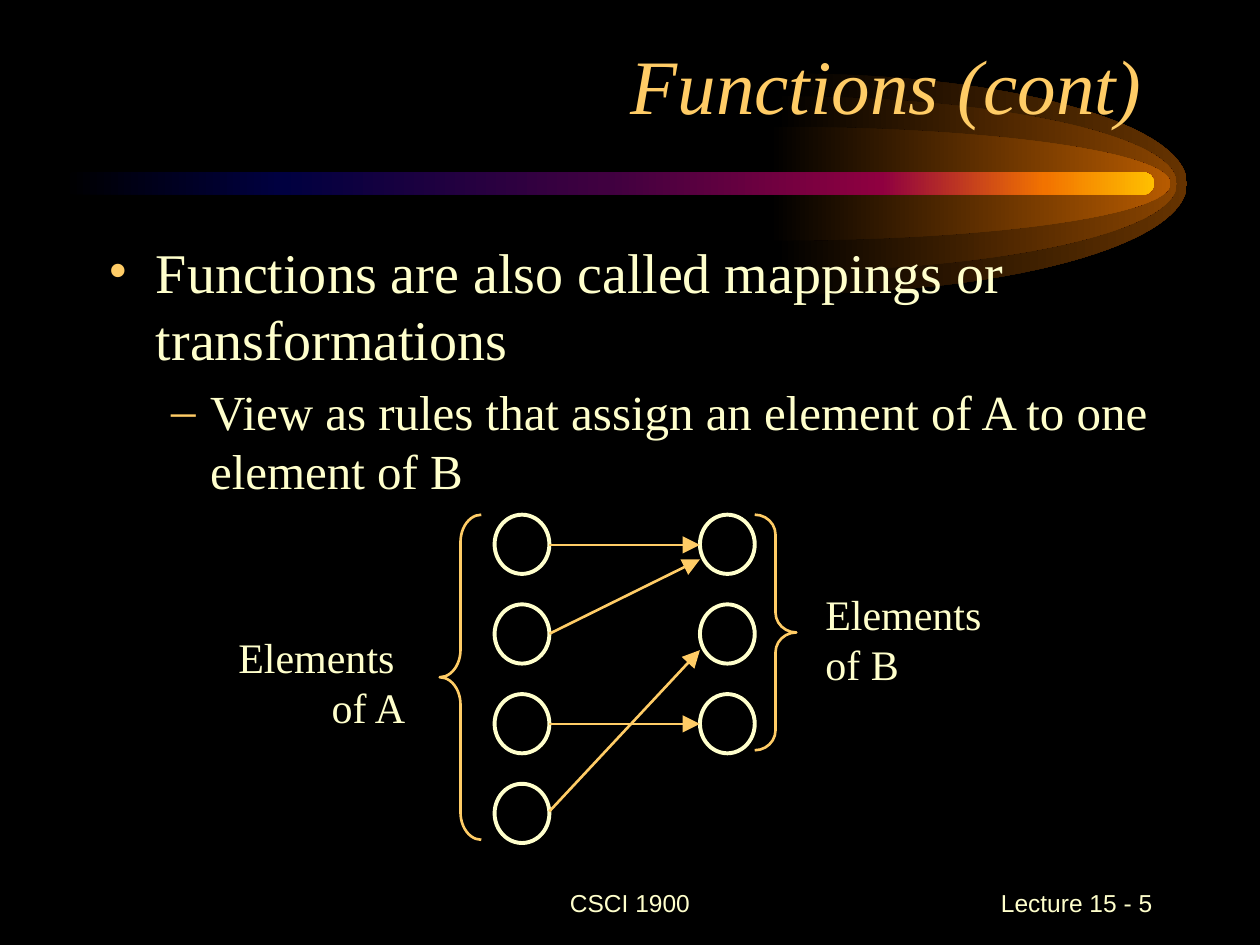
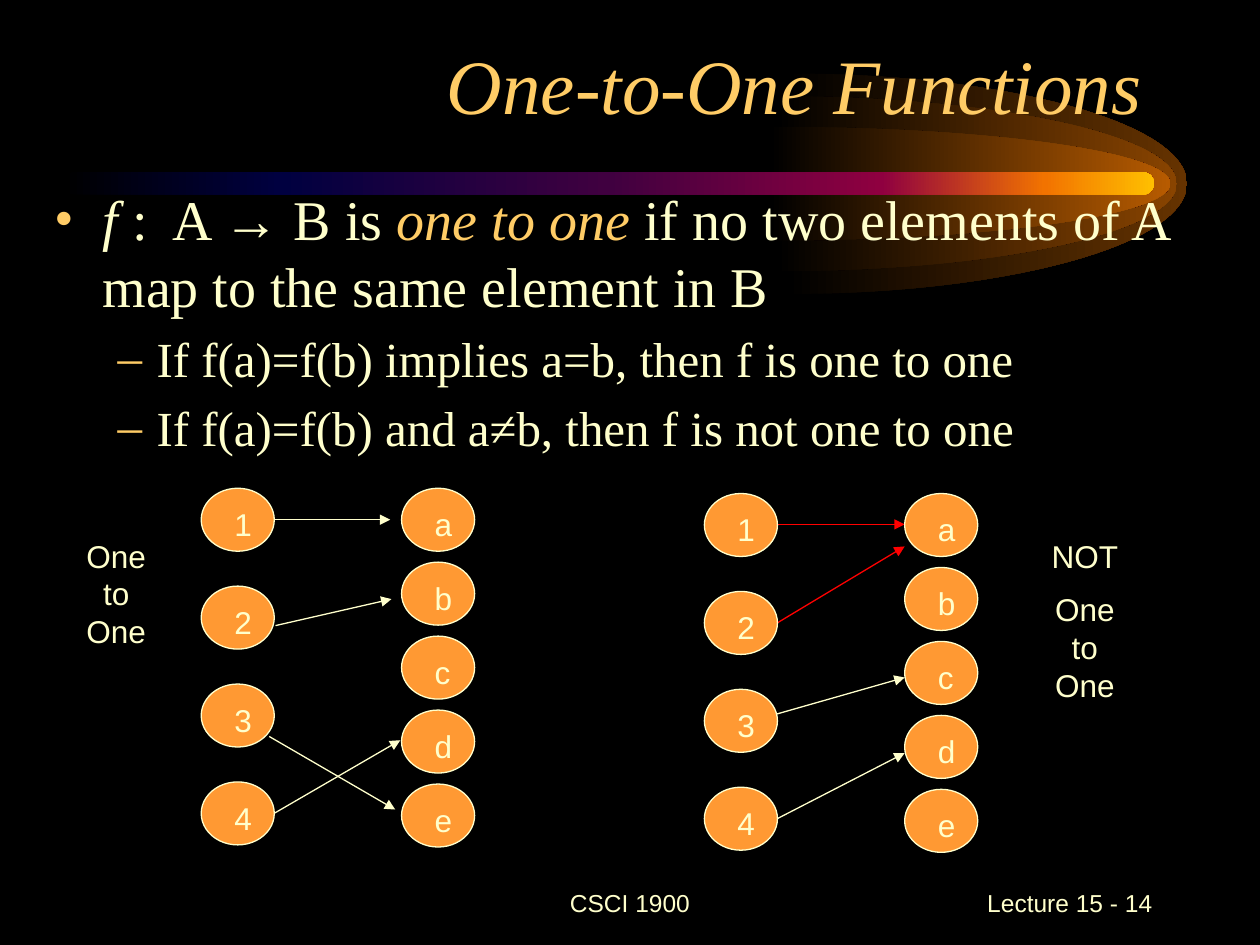
"""Build two lecture slides on functions and one-to-one functions."""
from lxml.etree import SubElement
from pptx import Presentation
from pptx.dml.color import RGBColor
from pptx.enum.shapes import MSO_CONNECTOR, MSO_SHAPE
from pptx.enum.text import MSO_ANCHOR, PP_ALIGN
from pptx.oxml.ns import qn
from pptx.util import Inches, Pt

BLACK = RGBColor(0x00, 0x00, 0x00)
CREAM = RGBColor(0xFF, 0xFF, 0xCC)
GOLD = RGBColor(0xFF, 0xCC, 0x66)
AMBER = RGBColor(0xFF, 0x99, 0x33)
RED = RGBColor(0xFF, 0x00, 0x00)
NAVY = RGBColor(0x00, 0x00, 0x40)
PLUM = RGBColor(0x40, 0x00, 0x40)
WINE = RGBColor(0x8F, 0x00, 0x40)
FLAME = RGBColor(0xF2, 0x73, 0x00)
SUN = RGBColor(0xFF, 0xBF, 0x00)
BROWN = RGBColor(0x66, 0x33, 0x00)
UMBER = RGBColor(0x89, 0x44, 0x00)
RUST = RGBColor(0xB7, 0x5B, 0x00)

SERIF, SANS = "Times New Roman", "Arial"
LEFT, MID, RIGHT = PP_ALIGN.LEFT, PP_ALIGN.CENTER, PP_ALIGN.RIGHT
COLS = 100
CURVE = 0.55
GLOWS = [(62.4, 8.75, BROWN), (61.6, 6.95, UMBER), (61.1, 4.52, RUST)]
BAND = [(0, BLACK), (20, NAVY), (50, PLUM), (75, WINE), (90, FLAME), (100, SUN)]
LEVELS = [("•", 32, 0.38, 0.38), ("–", 28, 0.81, 0.31)]


class Deck:
    """Hold the shared style and the current slide, on a grid of COLS square cells across."""

    def __init__(self):
        self.file = Presentation()
        self.file.slide_width, self.file.slide_height = Inches(10), Inches(7.5)
        self.cell = self.file.slide_width / COLS

    def grid(self, *cells):
        return [round(cell * self.cell) for cell in cells]

    def start(self, title, page):
        self.slide = self.file.slides.add_slide(self.file.slide_layouts[6])
        self.shapes = self.slide.shapes
        fill = self.slide.background.fill
        fill.solid()
        fill.fore_color.rgb = BLACK
        for glow in GLOWS:
            self.glow(*glow)
        band = self.shape(MSO_SHAPE.ROUNDED_RECTANGLE, 5, 13.65, 86.6, 1.8)
        band.adjustments[0] = 0.5
        self.blend(band, BAND)
        self.label(34.15, 69.15, 31.7, 5, ["CSCI 1900"], 14, align=MID,
                   anchor=MSO_ANCHOR.MIDDLE)
        self.label(71.65, 69.15, 20.8, 5, [f" Lecture 15 - {page}"], 14, align=RIGHT,
                   anchor=MSO_ANCHOR.MIDDLE)
        head = self.label(6.65, 2.5, 85, 8.3, [title], 44, SERIF, GOLD, RIGHT,
                          anchor=MSO_ANCHOR.BOTTOM)
        head.paragraphs[0].font.italic = True

    def glow(self, x, high, color):
        wide, y = 31.8, 14.58
        tip, bend, rise = x + wide, x + wide * CURVE, high * CURVE
        dots = [(bend, y - high), (tip, y - rise), (tip, y),
                (tip, y + rise), (bend, y + high), (x, y + high)]
        outline = self.shapes.build_freeform(*self.grid(x, y - high))
        outline.add_line_segments([self.grid(*dot) for dot in dots])
        shape = outline.convert_to_shape()
        lines = list(shape._element.iter(qn("a:lnTo")))
        for spot in (0, 3):
            curve = SubElement(lines[0].getparent(), qn("a:cubicBezTo"))
            lines[spot].addprevious(curve)
            for line in lines[spot:spot + 3]:
                curve.append(line[0])
        for line in lines:
            line.getparent().remove(line)
        shape.shadow.inherit = False
        shape.line.fill.background()
        self.blend(shape, [(0, BLACK), (100, color)])

    def blend(self, shape, stops):
        shape.fill.gradient()
        shape.fill.gradient_angle = 0
        row = shape._element.spPr.find(qn("a:gradFill")).find(qn("a:gsLst"))
        row.clear()
        for share, color in stops:
            stop = SubElement(row, qn("a:gs"), pos=str(share * 1000))
            SubElement(stop, qn("a:srgbClr"), val=str(color))

    def shape(self, kind, x, y, wide, high, fill=None, line=None, weight=1):
        shape = self.shapes.add_shape(kind, *self.grid(x, y, wide, high))
        shape.shadow.inherit = False
        if fill is None:
            shape.fill.background()
        else:
            shape.fill.solid()
            shape.fill.fore_color.rgb = fill
        if line is None:
            shape.line.fill.background()
        else:
            shape.line.color.rgb = line
            shape.line.width = Pt(weight)
        return shape

    def style(self, para, size, font=SANS, color=CREAM, align=LEFT):
        para.alignment = align
        para.font.size, para.font.name = Pt(size), font
        para.font.color.rgb = color

    def frame(self, x, y, wide, high, pad=True):
        frame = self.shapes.add_textbox(*self.grid(x, y, wide, high)).text_frame
        frame.word_wrap = True
        if not pad:
            frame.margin_left = frame.margin_right = 0
            frame.margin_top = frame.margin_bottom = 0
        return frame

    def label(self, x, y, wide, high, lines, size, font=SANS, color=CREAM, align=LEFT,
              anchor=MSO_ANCHOR.TOP, pad=True):
        frame = self.frame(x, y, wide, high, pad)
        frame.vertical_anchor = anchor
        for spot, line in enumerate(lines):
            para = frame.add_paragraph() if spot else frame.paragraphs[0]
            para.text = line
            para.space_before = Pt(size / 2)
            self.style(para, size, font, color, align)
        return frame

    def points(self, x, y, wide, high, items):
        frame = self.frame(x, y, wide, high)
        for spot, (level, parts) in enumerate(items):
            para = frame.add_paragraph() if spot else frame.paragraphs[0]
            mark, size, margin, hang = LEVELS[level]
            para.level = level
            para.space_before = Pt(size / 5)
            prop = para._p.get_or_add_pPr()
            prop.set("marL", str(Inches(margin)))
            prop.set("indent", str(-Inches(hang)))
            SubElement(SubElement(prop, qn("a:buClr")), qn("a:srgbClr"), val=str(GOLD))
            SubElement(prop, qn("a:buFont"), typeface=SERIF)
            SubElement(prop, qn("a:buChar"), char=mark)
            self.style(para, size, SERIF)
            for text, *color in parts:
                run = para.add_run()
                run.text = text
                if color:
                    run.font.italic = True
                    run.font.color.rgb = color[0]

    def ring(self, x, y):
        self.shape(MSO_SHAPE.OVAL, x, y, 4.35, 4.7, line=CREAM, weight=2.25)

    def brace(self, kind, x, high, bend):
        shape = self.shape(kind, x, 40.85, 3.3, high, line=GOLD, weight=1.5)
        shape.adjustments[0] = bend

    def node(self, x, y, name):
        self.shape(MSO_SHAPE.OVAL, x, y, 5.8, 5, AMBER, CREAM, 0.75)
        self.label(x + 1.65, y + 0.85, 3.3, 4, [name], 18)

    def arrow(self, ends, color, weight, head="med"):
        link = self.shapes.add_connector(MSO_CONNECTOR.STRAIGHT, *self.grid(*ends))
        link.line.color.rgb = color
        link.line.width = Pt(weight)
        SubElement(link.line._get_or_add_ln(), qn("a:tailEnd"), type="triangle",
                   w=head, len=head)
        SubElement(link._element.spPr, qn("a:effectLst"))

    def map(self, x, y, links):
        for color, left, top, right, base in links:
            self.arrow((x + left, y + top, x + right, y + base), color, 0.75)
        for shift, step, names in [(0, 7.77, "1234"), (15.9, 5.87, "abcde")]:
            for spot, name in enumerate(names):
                self.node(x + shift, y + step * spot, name)


def main():
    deck = Deck()

    deck.start("Functions (cont)", 5)
    deck.points(7.6, 18.35, 85, 49.2, [
        (0, [("Functions are also called mappings or transformations",)]),
        (1, [("View as rules that assign an element of A to one element of B",)]),
    ])
    for x, count in [(39.25, 4), (55.55, 3)]:
        for spot in range(count):
            deck.ring(x, 40.85 + 7.12 * spot)
    deck.brace(MSO_SHAPE.LEFT_BRACE, 34.9, 25.8, 0.66)
    deck.brace(MSO_SHAPE.RIGHT_BRACE, 59.9, 18.7, 0.48)
    deck.label(15.95, 50.1, 16.2, 8.2, ["Elements \vof A"], 24, SERIF, align=RIGHT, pad=False)
    deck.label(65.5, 46.7, 17.2, 8.2, ["Elements \vof B"], 24, SERIF, pad=False)
    for top, base in [(43.25, 43.25), (50.3, 44.4), (57.45, 57.45), (64.4, 51.6)]:
        deck.arrow((43.6, top, 55.55, base), GOLD, 1.5, "lg")

    deck.start("One-to-One Functions", 14)
    deck.points(3.35, 14.15, 95, 49.5, [
        (0, [("f", CREAM), (" :  A → B is ",), ("one to one", GOLD),
             (" if no two elements of A map to the same element in B",)]),
        (1, [("If f(a)=f(b) implies a=b, then f is one to one",)]),
        (1, [("If f(a)=f(b) and a≠b, then f is not one to one",)]),
    ])
    deck.label(4.62, 42.1, 9.2, 10, ["One to One"], 18, align=MID)
    deck.label(81.5, 42.1, 9.2, 14.5, ["NOT", "One to One"], 18, align=MID)
    deck.map(15.97, 38.75, [
        (CREAM, 5.8, 2.5, 15, 2.5),
        (CREAM, 5.9, 10.9, 15.1, 8.8),
        (CREAM, 5.4, 19.7, 15.4, 25.5),
        (CREAM, 5.8, 25.8, 15.8, 20),
    ])
    deck.map(55.9, 39.17, [
        (RED, 5.8, 2.45, 15.9, 2.45),
        (RED, 5.4, 10.5, 15.9, 4.2),
        (CREAM, 5.4, 17.6, 15.9, 14.6),
        (CREAM, 5.8, 25.8, 15.9, 20.6),
    ])
    deck.file.save("out.pptx")


if __name__ == "__main__":
    main()
